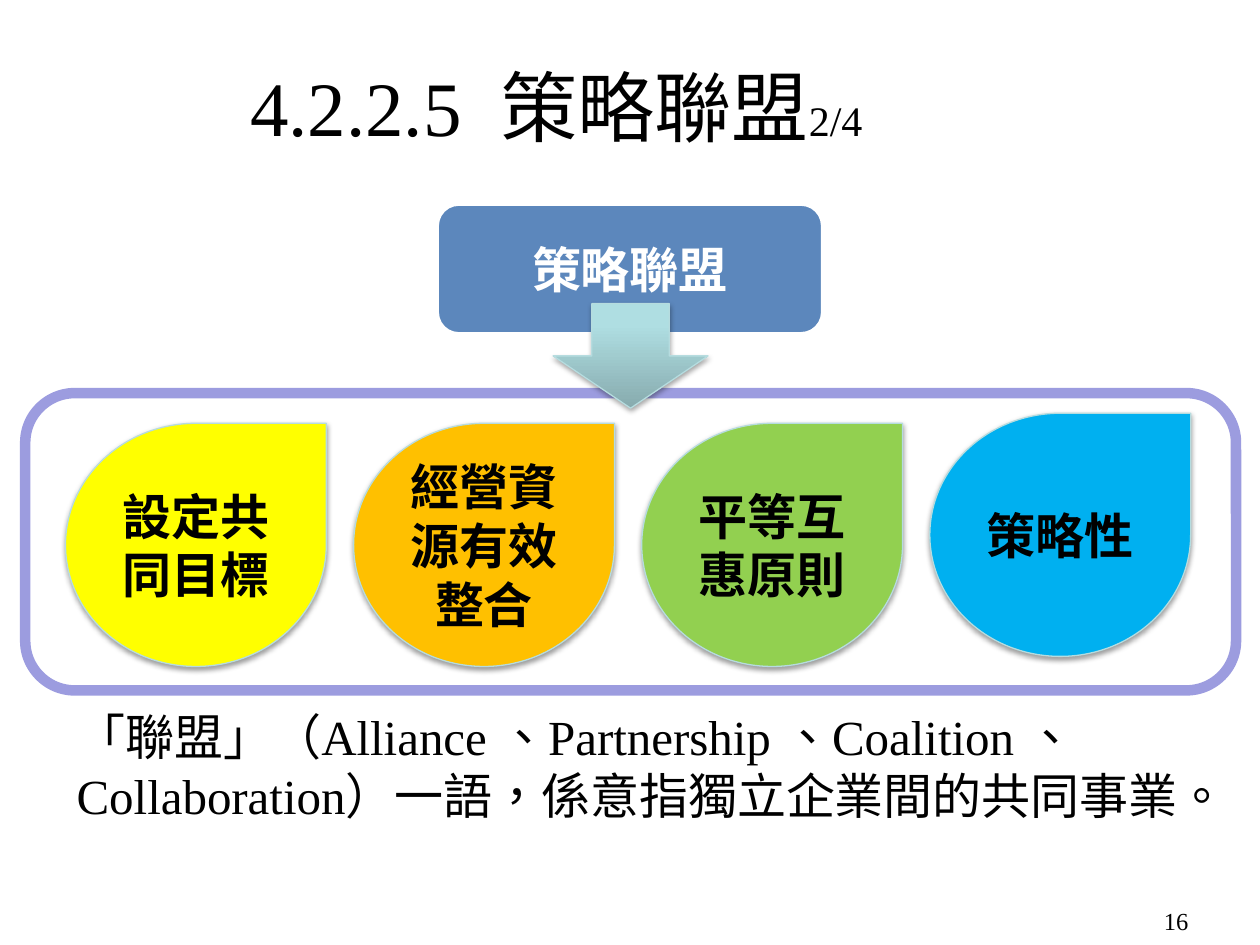
from dataclasses import dataclass

from lxml import etree
from pptx import Presentation
from pptx import util as u
from pptx.dml.color import RGBColor
from pptx.enum import lang, shapes, text
from pptx.oxml import parse_xml
from pptx.oxml.ns import nsdecls, qn


@dataclass(frozen=True)
class Theme:
    serif: str = "Times New Roman"
    sans: str = "Noto Sans CJK SC"
    black: str = "000000"
    white: str = "FFFFFF"
    heading: str = "5C87BC"
    frame: str = "9C9CDF"
    edge: str = "B6DCDF"
    arrow: tuple = ((0, "87ABAE"), (80, "AFDEE2"), (100, "AFE0E4"))
    drops: tuple = ("FFFF00", "FFC000", "92D050", "00B0F0")
    title_size: int = 44
    body_size: int = 28
    part_size: int = 24
    number_size: int = 14


THEME = Theme()
PRINCIPLES = ("設定共同目標", "經營資源有效整合", "平等互惠原則", "策略性")


def inches(*values):
    return [u.Inches(value) for value in values]


def write(shape, runs, align, anchor, font=THEME.serif, color=THEME.black, bold=False):
    frame = shape.text_frame
    frame.word_wrap = True
    frame.vertical_anchor = anchor
    paragraph = frame.paragraphs[0]
    paragraph.alignment = align
    for content, size in runs:
        run = paragraph.add_run()
        run.text = content
        values = {
            "name": font,
            "size": u.Pt(size),
            "bold": bold,
            "language_id": lang.MSO_LANGUAGE_ID.TRADITIONAL_CHINESE,
        }
        for name, value in values.items():
            setattr(run.font, name, value)
        run.font.color.rgb = RGBColor.from_string(color)
        latin = run.font._element.find(qn("a:latin"))
        east_asian = etree.Element(qn("a:ea"), typeface=THEME.sans)
        latin.addnext(east_asian)


def add_text(slide, box, runs, align=text.PP_ALIGN.LEFT, anchor=text.MSO_ANCHOR.TOP):
    shape = slide.shapes.add_textbox(*inches(*box))
    write(shape, runs, align, anchor)


def add_block(slide, kind, box, fill, line, width):
    shape = slide.shapes.add_shape(kind, *inches(*box))
    shape.shadow.inherit = False
    if fill:
        shape.fill.solid()
        shape.fill.fore_color.rgb = RGBColor.from_string(fill)
    else:
        shape.fill.background()
    shape.line.color.rgb = RGBColor.from_string(line)
    shape.line.width = u.Pt(width)
    return shape


def label(shape, content, font, color):
    write(shape, [(content, THEME.body_size)], text.PP_ALIGN.CENTER,
          text.MSO_ANCHOR.MIDDLE, font, color, True)


def add_shadow(shape, opacity):
    effects = shape._element.spPr.find(qn("a:effectLst"))
    effects.append(parse_xml(
        f'<a:outerShdw {nsdecls("a")} blurRad="{u.Pt(3.1)}" dist="{u.Pt(1.6)}" '
        f'dir="5400000" rotWithShape="0"><a:srgbClr val="{THEME.black}">'
        f'<a:alpha val="{opacity * 1000}"/></a:srgbClr></a:outerShdw>'))


def add_gradient(shape, stops):
    properties = shape._element.spPr
    colors = "".join(
        f'<a:gs pos="{position * 1000}"><a:srgbClr val="{color}"/></a:gs>'
        for position, color in stops)
    gradient = parse_xml(
        f'<a:gradFill {nsdecls("a")} rotWithShape="1"><a:gsLst>{colors}</a:gsLst>'
        '<a:lin ang="16200000" scaled="0"/></a:gradFill>')
    properties.replace(properties.find(qn("a:solidFill")), gradient)


def add_drops(slide):
    left, gap = 0.52, (7.38 - 0.52) / 3
    for index, (content, color) in enumerate(zip(PRINCIPLES, THEME.drops)):
        top = 3.28 if index == len(PRINCIPLES) - 1 else 3.36
        drop = add_block(slide, shapes.MSO_SHAPE.TEAR, (left + index * gap, top, 2.07, 1.93),
                         color, THEME.edge, 0.75)
        add_shadow(drop, 38)
        label(drop, content, THEME.sans, THEME.black)


def add_arrow(slide):
    arrow = add_block(slide, shapes.MSO_SHAPE.DOWN_ARROW, (4.39, 2.41, 1.23, 0.83),
                      THEME.white, THEME.edge, 0.75)
    add_gradient(arrow, THEME.arrow)
    add_shadow(arrow, 35)


def main():
    presentation = Presentation()
    presentation.slide_width, presentation.slide_height = inches(10, 7.5)
    slide = presentation.slides.add_slide(presentation.slide_layouts[6])
    rounded = shapes.MSO_SHAPE.ROUNDED_RECTANGLE

    heading = add_block(slide, rounded, (3.47, 1.62, 3.06, 1.03), THEME.heading, THEME.white, 2)
    label(heading, "策略聯盟", THEME.serif, THEME.white)
    add_text(slide, (0.2, 0.36, 8.43, 0.95),
             [("4.2.2.5  策略聯盟", THEME.title_size), ("2/4", THEME.part_size)],
             text.PP_ALIGN.CENTER, text.MSO_ANCHOR.MIDDLE)
    add_text(slide, (8.54, 7.14, 0.99, 0.31), [("16", THEME.number_size)], text.PP_ALIGN.RIGHT)
    add_drops(slide)
    add_block(slide, rounded, (0.2, 3.12, 9.61, 2.36), None, THEME.frame, 6)
    add_arrow(slide)
    add_text(slide, (0.51, 5.56, 9.06, 1.04),
             [("「聯盟」（Alliance 、Partnership 、Coalition 、Collaboration）一語，"
               "係意指獨立企業間的共同事業。", THEME.body_size)])
    presentation.save("out.pptx")


if __name__ == "__main__":
    main()
